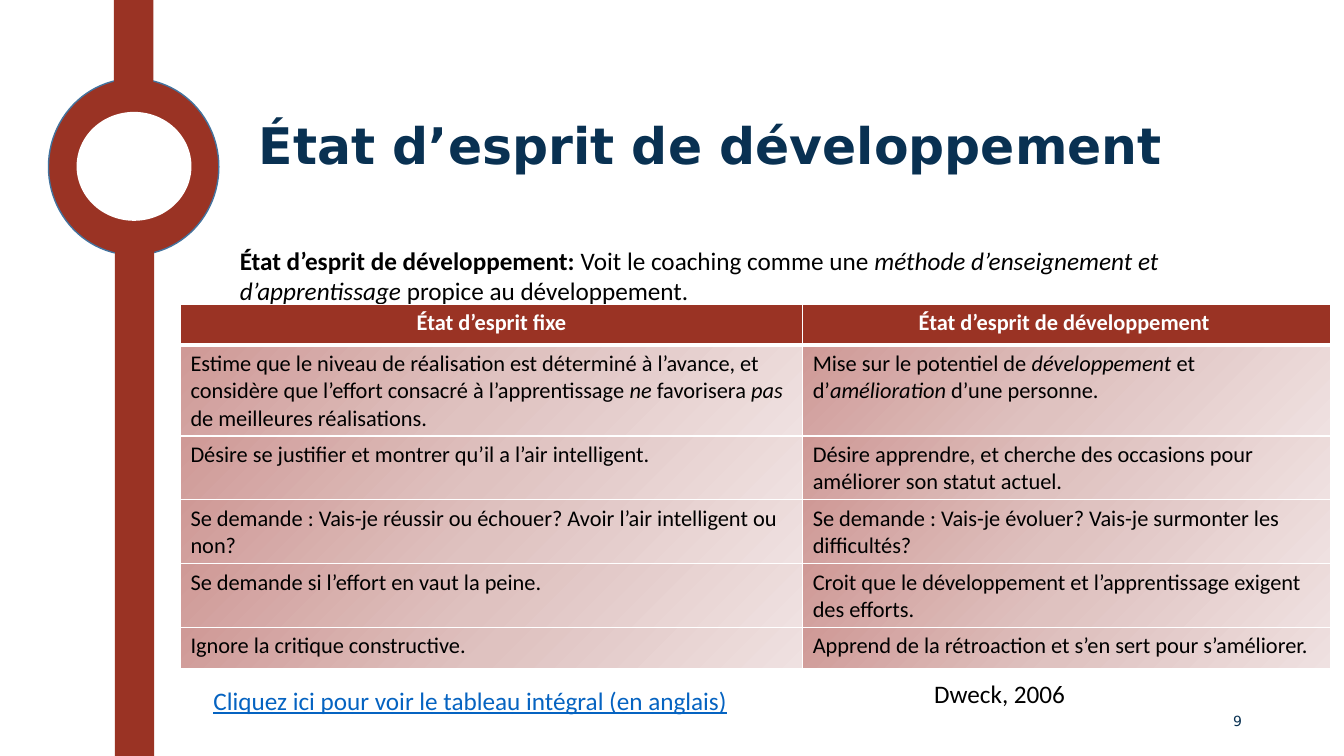
from lxml import etree
from pptx import Presentation
from pptx.dml.color import RGBColor
from pptx.enum import shapes, text
from pptx.oxml import ns
from pptx.util import Pt

BRICK = RGBColor(0x9A, 0x33, 0x24)
NAVY = RGBColor(0x09, 0x31, 0x52)
STEEL = RGBColor(0x43, 0x73, 0x9E)
LINK = RGBColor(0x05, 0x63, 0xC1)
WHITE = RGBColor(0xFF, 0xFF, 0xFF)
BLACK = RGBColor(0, 0, 0)
GRADIENT = [(0, RGBColor(0xCF, 0x99, 0x96)), (50, RGBColor(0xDF, 0xC2, 0xC0)),
            (100, RGBColor(0xEF, 0xE1, 0xE1))]

BOLD, ITALIC = {"bold": True}, {"italic": True}
BODY = {"name": "Calibri", "size": Pt(18), "color": BLACK}
CELL = {**BODY, "size": Pt(16)}
HEADING = {**CELL, "bold": True, "color": WHITE}
TITLE = {"name": "DejaVu Sans", "size": Pt(36), "bold": True, "color": NAVY}
NUMBER = {**TITLE, "size": Pt(10), "bold": False}
LEFT, CENTER, RIGHT = text.PP_ALIGN.LEFT, text.PP_ALIGN.CENTER, text.PP_ALIGN.RIGHT
TOP, MIDDLE = text.MSO_ANCHOR.TOP, text.MSO_ANCHOR.MIDDLE

OVAL, BAR = shapes.MSO_SHAPE.OVAL, shapes.MSO_SHAPE.RECTANGLE
TIMELINE = [
    (OVAL, (34.6, 56.2, 121.7, 126), BRICK, STEEL),
    (BAR, (82.1, 178.6, 28.1, 361.4), BRICK, None),
    (BAR, (81.4, -7.9, 28.1, 67), BRICK, None),
    (OVAL, (54.7, 79.9, 82.1, 77.8), WHITE, None),
]
TEXTS = [
    ((177.8, 56.9, 782, 97.2), [("État d’esprit de développement", {})],
     TITLE, LEFT, MIDDLE, 0.9),
    ((678.2, 500.4, 216, 28.8), [("9", {})], NUMBER, RIGHT, MIDDLE, 1),
    ((660.2, 481, 211, 28.8), [("Dweck, 2006", {})], BODY, LEFT, TOP, 1),
    ((145.4, 486, 395.3, 28.8),
     [("Cliquez ici pour voir le tableau intégral (en anglais)", {"underline": True})],
     {**BODY, "color": LINK}, LEFT, TOP, 1),
    ((164.2, 171.4, 787, 51.1),
     [("État d’esprit de développement: ", BOLD), ("Voit le coaching comme une ", {}),
      ("méthode d’enseignement et d’apprentissage", ITALIC),
      (" propice au développement.", {})], BODY, LEFT, TOP, 1),
]
TABLE_LEFT, TABLE_TOP, ROW_HEIGHT = 128.9, 217.4, 29.2
COLUMN_WIDTHS = [444.5, 377.3]
ROWS = [
    ([("État d’esprit fixe", {})], [("État d’esprit de développement ", {})]),
    ([("Estime que le niveau de réalisation est déterminé à l’avance, et considère "
       "que l’effort consacré à l’apprentissage ", {}), ("ne", ITALIC),
      (" favorisera ", {}), ("pas", ITALIC), (" de meilleures réalisations.", {})],
     [("Mise sur le potentiel de ", {}), ("développement", ITALIC), (" et d’", {}),
      ("amélioration", ITALIC), (" d’une personne.", {})]),
    ([("Désire se justifier et montrer qu’il a l’air intelligent.", {})],
     [("Désire apprendre, et cherche des occasions pour améliorer son statut actuel.", {})]),
    ([("Se demande : Vais-je réussir ou échouer? Avoir l’air intelligent ou non?", {})],
     [("Se demande : Vais-je évoluer? Vais-je surmonter les difficultés?", {})]),
    ([("Se demande si l’effort en vaut la peine.", {})],
     [("Croit que le développement et l’apprentissage exigent des efforts.", {})]),
    ([("Ignore la critique constructive.", {})],
     [("Apprend de la rétroaction et s’en sert pour s’améliorer.", {})]),
]


def write(frame, runs, base, alignment):
    paragraph = frame.paragraphs[0]
    paragraph.alignment = alignment
    for words, extra in runs:
        run = paragraph.add_run()
        run.text = words
        for key, value in {"bold": False, "italic": False, **base, **extra}.items():
            if key == "color":
                run.font.color.rgb = value
            else:
                setattr(run.font, key, value)
    return paragraph


def add(parent, tag, **attributes):
    return etree.SubElement(parent, ns.qn(tag), attributes)


def add_borders(cell, bottom):
    properties = cell._tc.get_or_add_tcPr()
    for tag, width in (("a:lnL", 1), ("a:lnR", 1), ("a:lnT", 1), ("a:lnB", bottom)):
        line = add(properties, tag, w=str(Pt(width)))
        add(add(line, "a:solidFill"), "a:srgbClr", val=str(WHITE))


def add_gradient(cell):
    gradient = add(cell._tc.get_or_add_tcPr(), "a:gradFill", rotWithShape="1")
    stops = add(gradient, "a:gsLst")
    for percent, color in GRADIENT:
        stop = add(stops, "a:gs", pos=str(percent * 1000))
        add(stop, "a:srgbClr", val=str(color))
    add(gradient, "a:lin", ang=str(45 * 60000), scaled="0")


def add_comparison(slide):
    frame = slide.shapes.add_table(
        len(ROWS), len(COLUMN_WIDTHS), Pt(TABLE_LEFT), Pt(TABLE_TOP),
        Pt(sum(COLUMN_WIDTHS)), Pt(ROW_HEIGHT * len(ROWS)))
    table = frame.table
    for column, width in zip(table.columns, COLUMN_WIDTHS):
        column.width = Pt(width)
    for row_index, row in enumerate(ROWS):
        header = row_index == 0
        table.rows[row_index].height = Pt(ROW_HEIGHT)
        for column_index, runs in enumerate(row):
            cell = table.cell(row_index, column_index)
            write(cell.text_frame, runs, HEADING if header else CELL,
                  CENTER if header else LEFT)
            add_borders(cell, 3 if header else 1)
            if header:
                cell.fill.solid()
                cell.fill.fore_color.rgb = BRICK
            else:
                add_gradient(cell)


def main():
    presentation = Presentation()
    presentation.slide_width, presentation.slide_height = Pt(960), Pt(540)
    slide = presentation.slides.add_slide(presentation.slide_layouts[6])
    for kind, box, fill, line in TIMELINE:
        shape = slide.shapes.add_shape(kind, *map(Pt, box))
        shape.shadow.inherit = False
        shape.fill.solid()
        shape.fill.fore_color.rgb = fill
        if line is None:
            shape.line.fill.background()
        else:
            shape.line.color.rgb = line
            shape.line.width = Pt(1)
    for box, runs, base, alignment, anchor, spacing in TEXTS:
        frame = slide.shapes.add_textbox(*map(Pt, box)).text_frame
        frame.word_wrap = True
        frame.vertical_anchor = anchor
        write(frame, runs, base, alignment).line_spacing = spacing
    add_comparison(slide)
    presentation.save("out.pptx")


if __name__ == "__main__":
    main()
